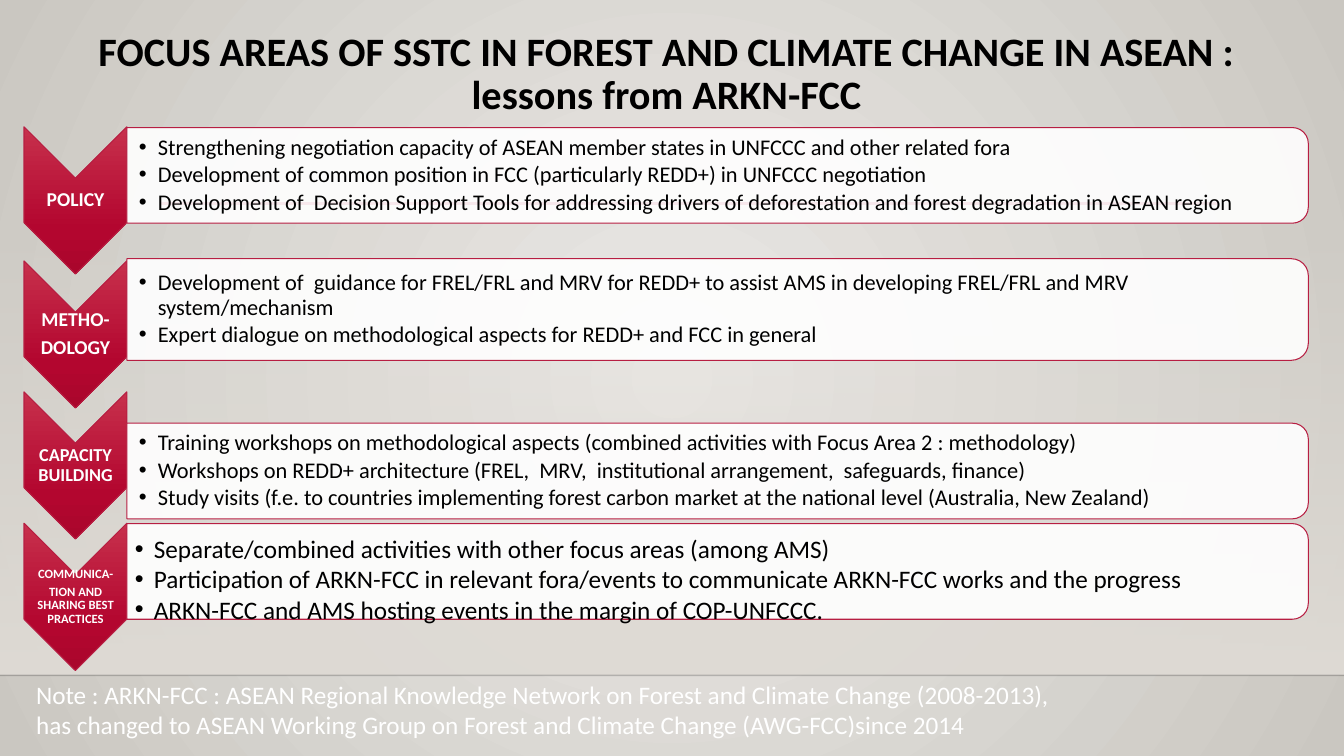
from lxml import etree
from pptx import Presentation
from pptx import util as u
from pptx.dml.color import RGBColor
from pptx.enum import shapes, text
from pptx.oxml import ns

BLACK = RGBColor(0, 0, 0)
NEAR_BLACK = RGBColor(0, 0, 1)
WHITE = RGBColor(0xFF, 0xFF, 0xFF)
CRIMSON = RGBColor(0xB7, 0x1E, 0x42)
SAND = RGBColor(0xDF, 0xDB, 0xD5)
PALE = RGBColor(0xEC, 0xEA, 0xE7)
STONE = RGBColor(0xCA, 0xC7, 0xC1)
RED_LIGHT = RGBColor(0xC7, 0x30, 0x4C)
RED = RGBColor(0xB3, 0x06, 0x2F)
RED_DARK = RGBColor(0xAA, 0x06, 0x2C)

DOWNWARD = '<a:lin ang="5400000" scaled="0"/>'
RADIAL = ('<a:path path="circle">'
          '<a:fillToRect l="50000" t="50000" r="50000" b="50000"/></a:path>')
WIDTH, HEIGHT = 33.87, 19.05
DEFAULT_INSETS = (0.25, 0.13, 0.25, 0.13)

# label, label size, chevron centre, panel centre, panel height, bullets
FOCUS_AREAS = [
    (["POLICY"], 14, 5.05, 4.42, 2.41, [
        "Strengthening negotiation capacity of ASEAN member states in UNFCCC and other related fora",
        "Development of common position in FCC (particularly REDD+) in UNFCCC negotiation",
        "Development of  Decision Support Tools for addressing drivers of deforestation and forest "
        "degradation in ASEAN region"]),
    (["METHO-", "DOLOGY"], 14, 8.43, 7.8, 2.56, [
        "Development of  guidance for FREL/FRL and MRV for REDD+ to assist AMS in developing "
        "FREL/FRL and MRV system/mechanism",
        "Expert dialogue on methodological aspects for REDD+ and FCC in general"]),
    (["CAPACITY BUILDING"], 13, 11.73, 11.87, 2.41, [
        "Training workshops on methodological aspects (combined activities with Focus Area 2 : methodology)",
        "Workshops on REDD+ architecture (FREL,  MRV,  institutional arrangement,  safeguards, finance)",
        "Study visits (f.e. to countries implementing forest carbon market at the national level "
        "(Australia, New Zealand)"]),
    (["COMMUNICA-", "TION AND SHARING BEST PRACTICES"], 9, 15.04, 14.4, 2.41, []),
]
COMMUNICATION = [
    "Separate/combined activities with other focus areas (among AMS)",
    "Participation of ARKN-FCC in relevant fora/events to communicate ARKN-FCC works and the progress",
    "ARKN-FCC and AMS hosting events in the margin of COP-UNFCCC.",
]
NOTE = [
    "Note : ARKN-FCC : ASEAN Regional Knowledge Network on Forest and Climate Change (2008-2013),",
    "has changed to ASEAN Working Group on Forest and Climate Change (AWG-FCC)since 2014",
]


def drawing(xml):
    """Parse one element of the DrawingML namespace."""
    head, rest = xml.split(" ", 1)
    return etree.fromstring(f'{head} xmlns:a="{ns.nsuri("a")}" {rest}')


def set_opacity(element, percent):
    colour = element.find(".//" + ns.qn("a:srgbClr"))
    etree.SubElement(colour, ns.qn("a:alpha")).set("val", str(percent * 1000))


class Deck:
    font = "Calibri"

    def __init__(self):
        self.presentation = Presentation()
        self.presentation.slide_width = u.Cm(WIDTH)
        self.presentation.slide_height = u.Cm(HEIGHT)
        self.slide = self.presentation.slides.add_slide(self.presentation.slide_layouts[6])

    def gradient(self, fill, element, stops, direction):
        """Fill with (position, colour, opacity) stops."""
        fill.gradient()
        marks = "".join(
            f'<a:gs pos="{position * 1000}"><a:srgbClr val="{colour}">'
            f'<a:alpha val="{opacity * 1000}"/></a:srgbClr></a:gs>'
            for position, colour, opacity in stops)
        old = element.find(".//" + ns.qn("a:gradFill"))
        old.getparent().replace(old, drawing(
            f'<a:gradFill rotWithShape="0"><a:gsLst>{marks}</a:gsLst>{direction}</a:gradFill>'))

    def background(self, *stops):
        self.gradient(self.slide.background.fill, self.slide.element, stops, RADIAL)

    def shape(self, kind, centre_x, centre_y, width, height, turn=0):
        """Add a shape by its centre; width and height are before turning."""
        shape = self.slide.shapes.add_shape(
            kind, u.Cm(centre_x - width / 2), u.Cm(centre_y - height / 2), u.Cm(width), u.Cm(height))
        shape.rotation = turn
        shape.shadow.inherit = False
        shape.line.fill.background()
        return shape

    def outline(self, shape):
        shape.line.color.rgb = CRIMSON
        shape.line.width = u.Pt(0.75)

    def veil(self, top, height):
        veil = self.shape(shapes.MSO_SHAPE.RECTANGLE, WIDTH / 2, top + height / 2, WIDTH, height)
        self.gradient(veil.fill, veil.element, [(0, SAND, 0), (100, SAND, 100)], DOWNWARD)

    def chevron(self, centre_x, centre_y):
        chevron = self.shape(shapes.MSO_SHAPE.CHEVRON, centre_x, centre_y, 3.71, 2.59, 90)
        self.gradient(chevron.fill, chevron.element,
                      [(0, RED_LIGHT, 100), (69, RED, 100), (100, RED_DARK, 100)], DOWNWARD)
        self.outline(chevron)

    def panel(self, left, centre_y, width, height):
        panel = self.shape(shapes.MSO_SHAPE.ROUND_2_SAME_RECTANGLE,
                           left + width / 2, centre_y, height, width, 90)
        panel.fill.solid()
        panel.fill.fore_color.rgb = WHITE
        set_opacity(panel.element, 90)
        self.outline(panel)

    def rule(self, start, end, y, colour, weight, opacity=100):
        rule = self.slide.shapes.add_connector(
            shapes.MSO_CONNECTOR.STRAIGHT, u.Cm(start), u.Cm(y), u.Cm(end), u.Cm(y))
        rule.line.color.rgb = colour
        rule.line.width = u.Pt(weight)
        set_opacity(rule.element, opacity)
        etree.SubElement(rule.element.spPr, ns.qn("a:effectLst"))

    def text(self, lines, left, top, width, height, size, colour=BLACK, bold=False,
             align=text.PP_ALIGN.LEFT, anchor=text.MSO_ANCHOR.TOP, insets=DEFAULT_INSETS,
             spacing=1.0, after=0, bullets=False):
        """Write one paragraph per line; after is a share of the text size."""
        frame = self.slide.shapes.add_textbox(
            u.Cm(left), u.Cm(top), u.Cm(width), u.Cm(height)).text_frame
        frame.word_wrap = True
        frame.vertical_anchor = anchor
        frame.margin_left, frame.margin_top, frame.margin_right, frame.margin_bottom = map(u.Cm, insets)
        frame.text = "\n".join(lines)
        for paragraph in frame.paragraphs:
            paragraph.alignment = align
            paragraph.line_spacing = spacing
            paragraph.space_after = u.Pt(size * after)
            if bullets:
                properties = paragraph.font and paragraph._p.get_or_add_pPr()
                properties.set("marL", str(u.Cm(0.48)))
                properties.set("indent", str(u.Cm(-0.48)))
                default = properties.find(ns.qn("a:defRPr"))
                default.addprevious(drawing('<a:buFont typeface="Arial"/>'))
                default.addprevious(drawing('<a:buChar char="•"/>'))
            paragraph.font.name = self.font
            paragraph.font.size = u.Pt(size)
            paragraph.font.bold = bold
            paragraph.font.color.rgb = colour

    def focus_area(self, label, label_size, chevron_y, panel_y, panel_height, bullets):
        self.chevron(1.9, chevron_y)
        self.text(label, 0.61, chevron_y - 0.56, 2.59, 1.12, label_size, WHITE, True,
                  text.PP_ALIGN.CENTER, text.MSO_ANCHOR.MIDDLE, (0.03,) * 4, 0.9, 0.35)
        self.panel(3.2, panel_y, 29.77, panel_height)
        if bullets:
            self.text(bullets, 3.2, panel_y - panel_height / 2 + 0.12, 29.64, panel_height - 0.24, 16,
                      anchor=text.MSO_ANCHOR.MIDDLE, insets=(0.3, 0.03, 0.03, 0.03),
                      spacing=0.9, after=0.15, bullets=True)


def main():
    deck = Deck()
    deck.background((0, PALE, 100), (100, STONE, 100))
    deck.veil(5.61, 11.4)
    deck.rule(0, WIDTH, 17.02, NEAR_BLACK, 1, 20)
    deck.rule(4.04, 30.73, 5.13, CRIMSON, 2.5)
    deck.text(["FOCUS AREAS OF SSTC IN FOREST AND CLIMATE CHANGE IN ASEAN : lessons from ARKN-FCC"],
              1.27, 0.66, 31.06, 2.54, 28.8, bold=True, align=text.PP_ALIGN.CENTER, spacing=0.9)
    for area in FOCUS_AREAS:
        deck.focus_area(*area)
    deck.text(NOTE, 0.66, 16.99, 32.66, 1.8, 18, WHITE)
    deck.text(COMMUNICATION, 3.15, 13.31, 29.16, 2.57, 18, bullets=True)
    deck.presentation.save("out.pptx")


if __name__ == "__main__":
    main()
